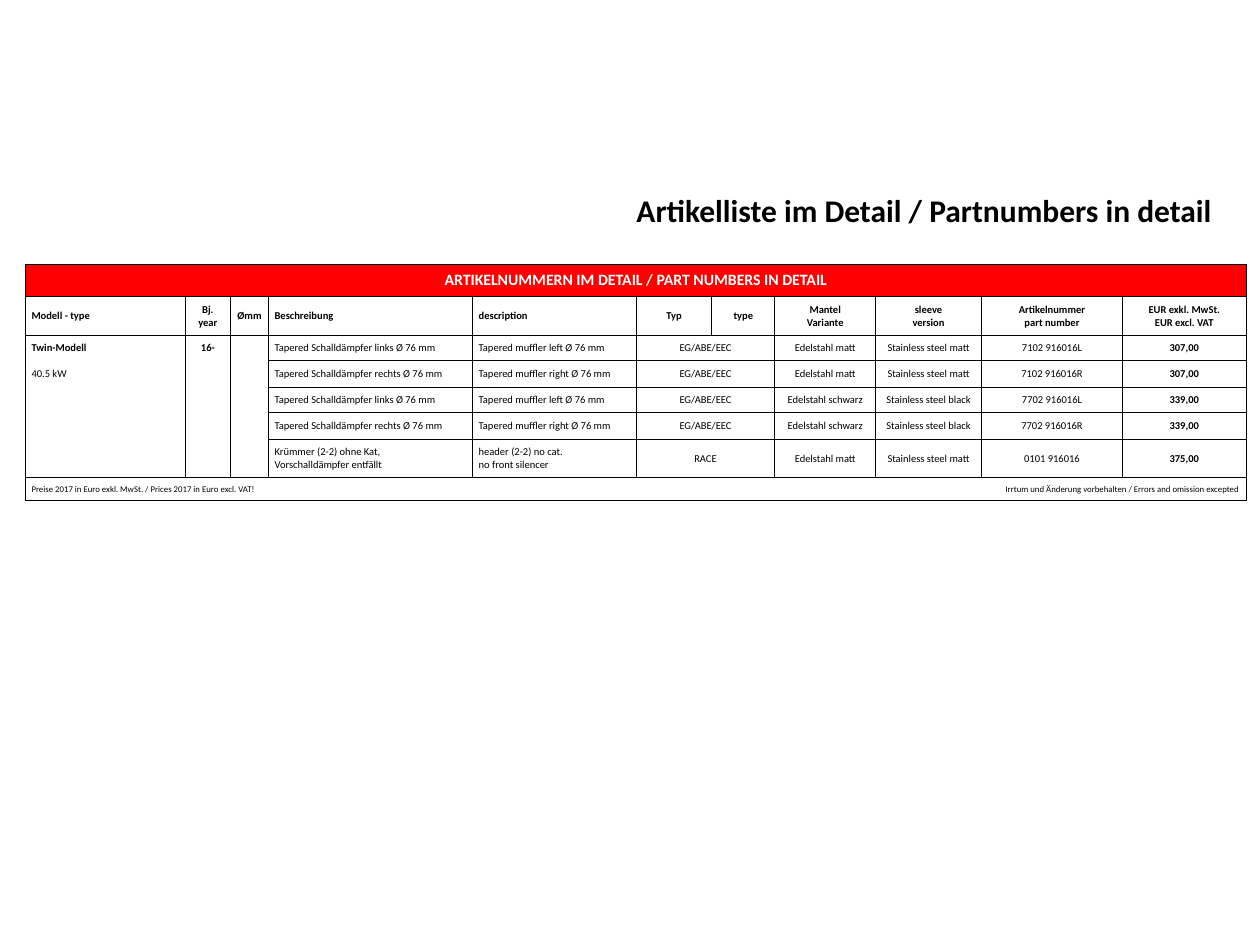
"""Build a one-slide part number price list with a title and a bordered table."""
from dataclasses import dataclass

from lxml.etree import SubElement
from pptx import Presentation
from pptx.dml.color import RGBColor as Rgb
from pptx.enum.text import MSO_ANCHOR as Anchor, PP_ALIGN as Align
from pptx.oxml.ns import qn
from pptx.util import Inches, Pt


@dataclass(frozen=True)
class Theme:
    font: str = "Calibri"
    ink: Rgb = Rgb(0, 0, 0)
    paper: Rgb = Rgb(255, 255, 255)
    accent: Rgb = Rgb(255, 0, 0)
    title: float = 18
    banner: float = 9
    body: float = 6
    note: float = 5
    rule: float = 0.5
    inset: float = 0.05


THEME = Theme()
TITLE = "Artikelliste im Detail / Partnumbers in detail"
BANNER = "ARTIKELNUMMERN IM DETAIL / PART NUMBERS IN DETAIL"
NOTES = (
    "Preise 2017 in Euro exkl. MwSt. / Prices 2017 in Euro excl. VAT!",
    "Irrtum und Änderung vorbehalten / Errors and omission excepted",
)
COLUMNS = [
    ("Modell - type", 1.27, Align.LEFT),
    ("Bj.\nyear", 0.36, Align.CENTER),
    ("Ømm", 0.3, Align.CENTER),
    ("Beschreibung", 1.62, Align.LEFT),
    ("description", 1.3, Align.LEFT),
    ("Typ", 0.6, Align.CENTER),
    ("type", 0.5, Align.CENTER),
    ("Mantel\nVariante", 0.8, Align.CENTER),
    ("sleeve\nversion", 0.84, Align.CENTER),
    ("Artikelnummer\npart number", 1.12, Align.CENTER),
    ("EUR exkl. MwSt.\nEUR excl. VAT", 0.98, Align.CENTER),
]
LEFT_MUFFLER = ("Tapered Schalldämpfer links Ø 76 mm", "Tapered muffler left Ø 76 mm", "EG/ABE/EEC", "")
RIGHT_MUFFLER = ("Tapered Schalldämpfer rechts Ø 76 mm", "Tapered muffler right Ø 76 mm", "EG/ABE/EEC", "")
HEADER_PIPE = ("Krümmer (2-2) ohne Kat,\nVorschalldämpfer entfällt", "header (2-2) no cat.\nno front silencer", "RACE", "")
MATT = ("Edelstahl matt", "Stainless steel matt")
BLACK = ("Edelstahl schwarz", "Stainless steel black")
MODELS = [("Twin-Modell", "16-", ""), ("40.5 kW", "", "")] + [("", "", "")] * 3
PARTS = [
    (*LEFT_MUFFLER, *MATT, "7102 916016L", "307,00"),
    (*RIGHT_MUFFLER, *MATT, "7102 916016R", "307,00"),
    (*LEFT_MUFFLER, *BLACK, "7702 916016L", "339,00"),
    (*RIGHT_MUFFLER, *BLACK, "7702 916016R", "339,00"),
    (*HEADER_PIPE, *MATT, "0101 916016", "375,00"),
]
ROW_HEIGHTS = [0.24, 0.31, 0.2, 0.21, 0.2, 0.21, 0.3, 0.18]
MODEL_COLUMNS = 3
TYPE_COLUMN = 5
NOTE_SPANS = ((0, 3), (8, 10))
FIRST_PART = 2
LAST_ROW = len(ROW_HEIGHTS) - 1
LAST_COLUMN = len(COLUMNS) - 1


def write(para, text, size, bold, color, align):
    para.alignment = align
    for index, line in enumerate(text.split("\n")):
        if index:
            para.add_line_break()
        span = para.add_run()
        span.text = line
        span.font.name = THEME.font
        span.font.size = Pt(size)
        span.font.bold = bold
        span.font.color.rgb = color


def draw_borders(cell, sides):
    properties = cell._tc.get_or_add_tcPr()
    for side in "LRTB":
        line = SubElement(properties, qn(f"a:ln{side}"), w=str(Pt(THEME.rule)))
        if side in sides:
            fill = SubElement(line, qn("a:solidFill"))
            SubElement(fill, qn("a:srgbClr"), val=str(THEME.ink))
        else:
            SubElement(line, qn("a:noFill"))


def sides_of(row, column):
    if row == LAST_ROW:
        return "TB" + ("L" if column == 0 else "") + ("R" if column >= NOTE_SPANS[1][0] else "")
    if row >= FIRST_PART and column < MODEL_COLUMNS:
        return "LR" + ("T" if row == FIRST_PART else "") + ("B" if row == LAST_ROW - 1 else "")
    return "LRTB"


def style_of(row, column):
    """Return size, bold, text colour and alignment of a cell."""
    if row == 0:
        return THEME.banner, True, THEME.paper, Align.CENTER
    if row == LAST_ROW:
        return THEME.note, False, THEME.ink, Align.RIGHT if column else Align.LEFT
    bold = row == 1 or column == LAST_COLUMN or (row == FIRST_PART and column < MODEL_COLUMNS)
    return THEME.body, bold, THEME.ink, COLUMNS[column][2]


def fill_table(table):
    blank = [""] * len(COLUMNS)
    footer = list(blank)
    for (start, _), note in zip(NOTE_SPANS, NOTES):
        footer[start] = note
    rows = [[BANNER] + blank[1:], [column[0] for column in COLUMNS]]
    rows += [model + part for model, part in zip(MODELS, PARTS)] + [footer]

    for column, (_, width, _) in zip(table.columns, COLUMNS):
        column.width = Inches(width)
    for row, height in zip(table.rows, ROW_HEIGHTS):
        row.height = Inches(height)

    for r, texts in enumerate(rows):
        for c, text in enumerate(texts):
            cell = table.cell(r, c)
            cell.margin_left = cell.margin_right = Inches(THEME.inset)
            cell.margin_top = cell.margin_bottom = Inches(THEME.inset)
            cell.vertical_anchor = Anchor.BOTTOM if r in (0, LAST_ROW) else Anchor.MIDDLE
            draw_borders(cell, sides_of(r, c))
            cell.fill.solid()
            cell.fill.fore_color.rgb = THEME.paper if r else THEME.accent
            para = cell.text_frame.paragraphs[0]
            size, bold, color, align = style_of(r, c)
            if text:
                write(para, text, size, bold, color, align)
            else:
                SubElement(para._p, qn("a:endParaRPr"), sz=str(int(size * 100)))

    spans = [(0, 0, LAST_COLUMN)]
    spans += [(row, TYPE_COLUMN, TYPE_COLUMN + 1) for row in range(FIRST_PART, LAST_ROW)]
    spans += [(LAST_ROW, start, end) for start, end in NOTE_SPANS]
    for row, start, end in spans:
        table.cell(row, start).merge(table.cell(row, end))


def main():
    deck = Presentation()
    deck.slide_width, deck.slide_height = Inches(10), Inches(7.5)
    page = deck.slides.add_slide(deck.slide_layouts[5])

    title = page.shapes.title
    title.left, title.top = Inches(4.84), Inches(1.47)
    title.width, title.height = Inches(4.88), Inches(0.39)
    frame = title.text_frame
    frame.vertical_anchor = Anchor.MIDDLE
    frame.word_wrap = True
    write(frame.paragraphs[0], TITLE, THEME.title, True, THEME.ink, Align.RIGHT)

    width = sum(column[1] for column in COLUMNS)
    table = page.shapes.add_table(
        len(ROW_HEIGHTS), len(COLUMNS), Inches(0.2), Inches(2.1), Inches(width), Inches(sum(ROW_HEIGHTS))
    ).table
    table.first_row = table.horz_banding = False
    fill_table(table)
    deck.save("out.pptx")


if __name__ == "__main__":
    main()
